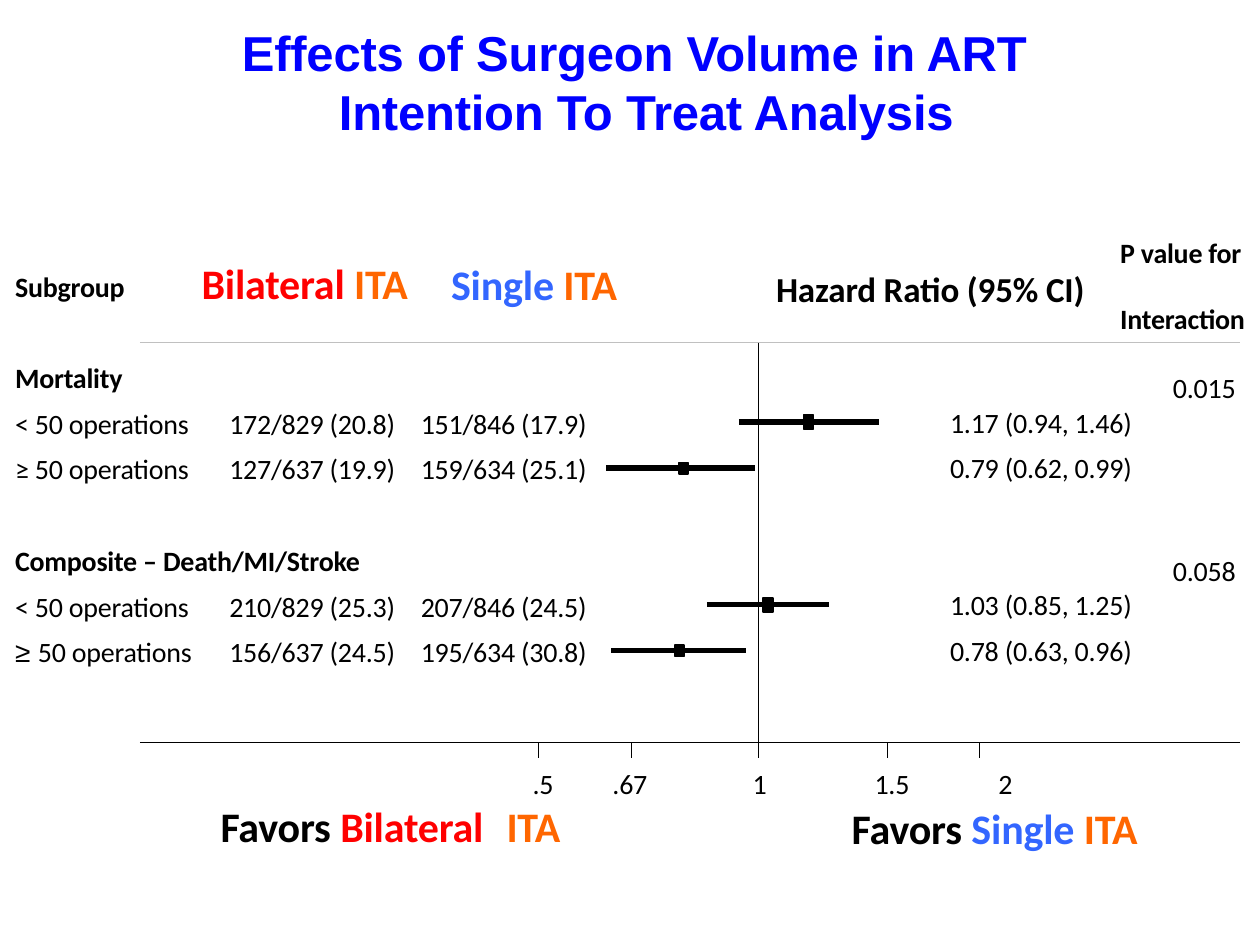
from math import log2

from pptx import Presentation
from pptx.dml.color import RGBColor
from pptx.enum.shapes import MSO_CONNECTOR as Connector, MSO_SHAPE as Shape
from pptx.enum.text import MSO_ANCHOR as Anchor, PP_ALIGN as Align
from pptx.oxml.ns import qn
from pptx.util import Inches, Pt
from lxml.etree import SubElement

BLACK = RGBColor(0x00, 0x00, 0x00)
GREY = RGBColor(0xC0, 0xC0, 0xC0)
BLUE = RGBColor(0x00, 0x00, 0xFF)
RED = RGBColor(0xFF, 0x00, 0x00)
ORANGE = RGBColor(0xFF, 0x66, 0x00)
LIGHT_BLUE = RGBColor(0x33, 0x66, 0xFF)

AXIS_LEFT, AXIS_RIGHT = 1.11, 9.84
HEADER_Y, AXIS_Y = 2.72, 5.89
UNITY_X, DOUBLING = 6.02, 1.75
ROW_PITCH = 0.365
SUBGROUP_X, BILATERAL_X, SINGLE_X, RATIO_X, P_X = 0.12, 1.82, 3.34, 7.54, 9.31

GROUPS = [
    (2.86, "Mortality", "0.015", [
        ("< ", "172/829 (20.8)", "151/846 (17.9)", (1.17, 0.94, 1.46), (0.08, 0.11), "Calibri"),
        ("≥ ", "127/637 (19.9)", "159/634 (25.1)", (0.79, 0.62, 0.99), (0.07, 0.09), "Calibri"),
    ]),
    (4.31, "Composite – Death/MI/Stroke", "0.058", [
        ("< ", "210/829 (25.3)", "207/846 (24.5)", (1.03, 0.85, 1.25), (0.08, 0.11), "Calibri"),
        ("≥ ", "156/637 (24.5)", "195/634 (30.8)", (0.78, 0.63, 0.96), (0.07, 0.09), "Arial"),
    ]),
]
TICKS = [(0.5, ".5", 4.31), (0.67, ".67", 5.0), (1, "1", 6.03),
         (1.5, "1.5", 7.08), (2, "2", 7.98)]


def ratio_x(ratio):
    return UNITY_X + DOUBLING * log2(ratio)


def add_run(paragraph, text, size=16, color=BLACK, bold=False, font="Calibri"):
    run = paragraph.add_run()
    run.text = text
    run.font.name = font
    run.font.size = Pt(size)
    run.font.bold = bold
    run.font.color.rgb = color
    run.font._element.set("spc", "-10")


def clear_insets(frame):
    frame.margin_left = frame.margin_right = frame.margin_top = frame.margin_bottom = 0
    frame.vertical_anchor = Anchor.TOP


def add_text(slide, left, top, width, height, lines, size=16, bold=False, gap=0,
             align=Align.LEFT):
    frame = slide.shapes.add_textbox(
        Inches(left), Inches(top), Inches(width), Inches(height)).text_frame
    clear_insets(frame)
    frame.word_wrap = False
    for index, parts in enumerate(lines):
        paragraph = frame.add_paragraph() if index else frame.paragraphs[0]
        paragraph.alignment = align
        if index:
            paragraph.space_before = Pt(gap)
        for text, color, font in parts:
            add_run(paragraph, text, size, color, bold, font)
    return frame


def part(text, color=BLACK, font="Calibri"):
    return text, color, font


def add_line(slide, x1, y1, x2, y2, width=0.5, color=BLACK):
    line = slide.shapes.add_connector(
        Connector.STRAIGHT, Inches(x1), Inches(y1), Inches(x2), Inches(y2))
    line.line.color.rgb = color
    line.line.width = Pt(width)
    SubElement(line._element.spPr, qn("a:effectLst"))


def add_estimate(slide, y, ratio, low, high, size):
    add_line(slide, ratio_x(low), y, ratio_x(high), y, 3)
    width, height = size
    marker = slide.shapes.add_shape(
        Shape.RECTANGLE, Inches(ratio_x(ratio) - width / 2), Inches(y - height / 2),
        Inches(width), Inches(height))
    marker.shadow.inherit = False
    marker.fill.solid()
    marker.fill.fore_color.rgb = BLACK
    marker.line.color.rgb = BLACK
    marker.line.width = Pt(1)


def add_title(slide):
    title = slide.shapes.title
    title.left, title.top = Inches(1.91), Inches(0.18)
    title.width, title.height = Inches(6.6), Inches(0.96)
    frame = title.text_frame
    clear_insets(frame)
    frame.word_wrap = True
    paragraph = frame.paragraphs[0]
    paragraph.alignment = Align.LEFT
    paragraph.line_spacing = 1.0
    properties = paragraph._p.get_or_add_pPr()
    properties.set("marL", str(Inches(0.78)))
    properties.set("indent", str(Inches(-0.77)))
    add_run(paragraph, "Effects of Surgeon Volume in ART", 28, BLUE, True, "Arial")
    paragraph.add_line_break()
    add_run(paragraph, "Intention To Treat Analysis", 28, BLUE, True, "Arial")


def add_headers(slide):
    add_text(slide, SUBGROUP_X, 2.14, 0.91, 0.28, [[part("Subgroup")]], bold=True)
    add_text(slide, 1.6, 2.04, 1.72, 0.42,
             [[part("Bilateral ", RED), part("ITA", ORANGE)]], 24, True)
    add_text(slide, 3.58, 2.05, 1.38, 0.42,
             [[part("Single ", LIGHT_BLUE), part("ITA", ORANGE)]], 24, True)
    add_text(slide, 6.16, 2.12, 2.5, 0.35, [[part("Hazard Ratio (95% CI)")]], 20, True)
    add_text(slide, 8.89, 1.87, 1.05, 0.82,
             [[part("P value for")], [part("Interaction")]], bold=True, gap=18.6)


def add_group(slide, top, outcome, p_value, rows):
    rows_top = top + ROW_PITCH
    signs, bilateral, single, estimates, sizes, fonts = zip(*rows)
    add_text(slide, SUBGROUP_X, top, 2.83, 0.28, [[part(outcome)]], bold=True)
    columns = [
        (SUBGROUP_X, rows_top, 1.46, [[part(sign, font=font), part("50 operations")]
                                      for sign, font in zip(signs, fonts)]),
        (BILATERAL_X, rows_top, 1.37, [[part(count)] for count in bilateral]),
        (SINGLE_X, rows_top, 1.37, [[part(count)] for count in single]),
        (RATIO_X, rows_top - 0.01, 1.5, [[part(f"{ratio:.2f} ({low:.2f}, {high:.2f})")]
                                         for ratio, low, high in estimates]),
    ]
    for left, column_top, width, lines in columns:
        add_text(slide, left, column_top, width, 0.64, lines, gap=6.8)
    add_text(slide, P_X, top + 0.08, 0.53, 0.28, [[part(p_value)]])
    for index, (estimate, size) in enumerate(zip(estimates, sizes)):
        add_estimate(slide, rows_top + 0.125 + index * ROW_PITCH, *estimate, size)


def add_axis(slide):
    add_line(slide, AXIS_LEFT, HEADER_Y, AXIS_RIGHT, HEADER_Y, color=GREY)
    add_line(slide, UNITY_X, HEADER_Y, UNITY_X, AXIS_Y)
    add_line(slide, AXIS_LEFT, AXIS_Y, AXIS_RIGHT, AXIS_Y)
    for ratio, label, center in TICKS:
        x = ratio_x(ratio)
        add_line(slide, x, AXIS_Y, x, AXIS_Y + 0.13)
        add_text(slide, center - 0.2, 6.08, 0.4, 0.28, [[part(label)]], align=Align.CENTER)


def add_favors(slide):
    favors_bilateral = add_text(
        slide, 1.75, 6.35, 2.75, 0.41,
        [[part("Favors "), part("Bilateral\t", RED), part("ITA", ORANGE)]], 24, True)
    properties = favors_bilateral.paragraphs[0]._p.get_or_add_pPr()
    tabs = SubElement(properties, qn("a:tabLst"))
    SubElement(tabs, qn("a:tab"), pos=str(Inches(2.27)), algn="l")
    add_text(slide, 6.76, 6.37, 2.37, 0.41,
             [[part("Favors "), part("Single ", LIGHT_BLUE), part("ITA", ORANGE)]], 24, True)


def main():
    deck = Presentation()
    deck.slide_width, deck.slide_height = Inches(10), Inches(7.5)
    slide = deck.slides.add_slide(deck.slide_layouts[5])
    add_title(slide)
    add_headers(slide)
    add_axis(slide)
    for group in GROUPS:
        add_group(slide, *group)
    add_favors(slide)
    deck.save("out.pptx")


if __name__ == "__main__":
    main()
